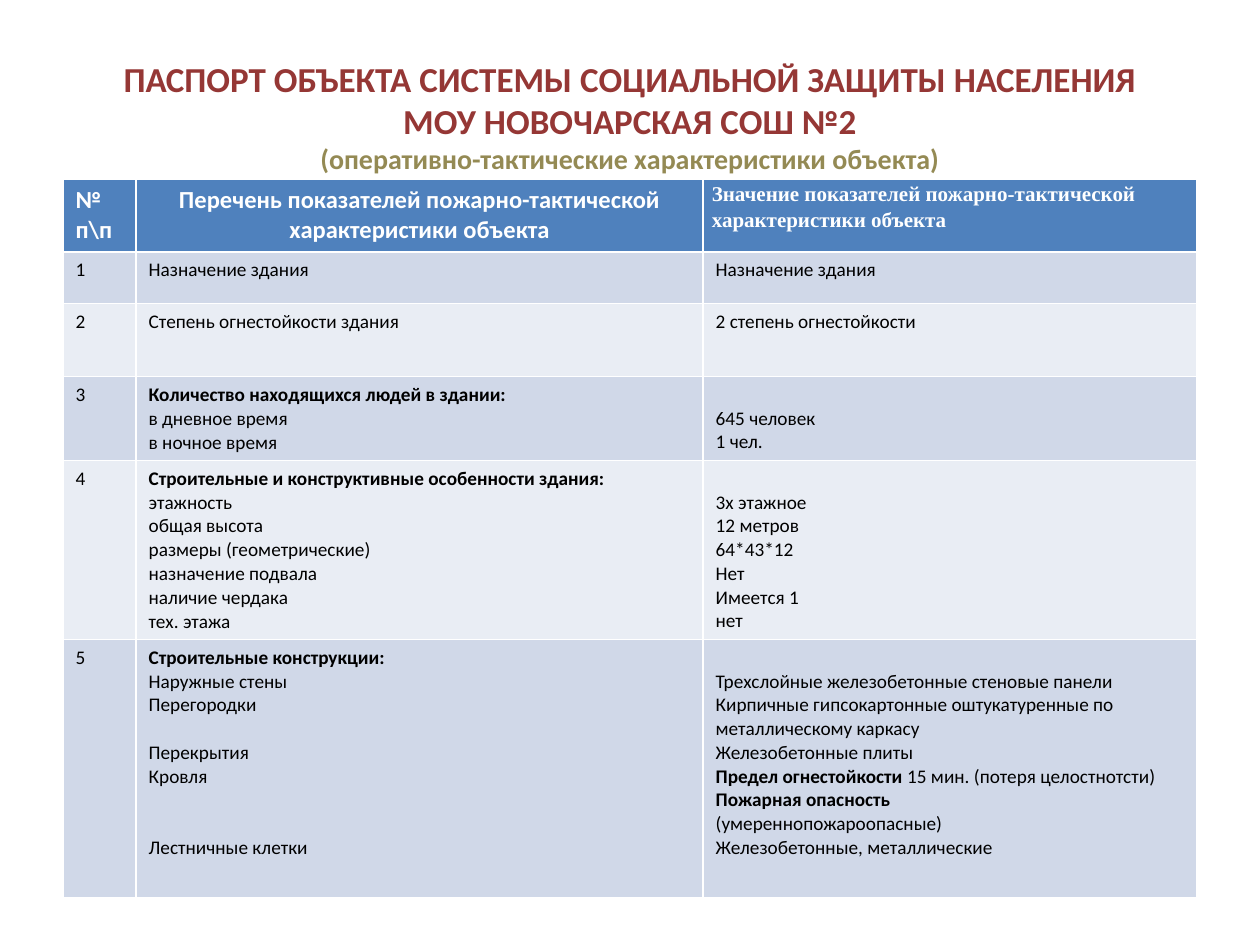
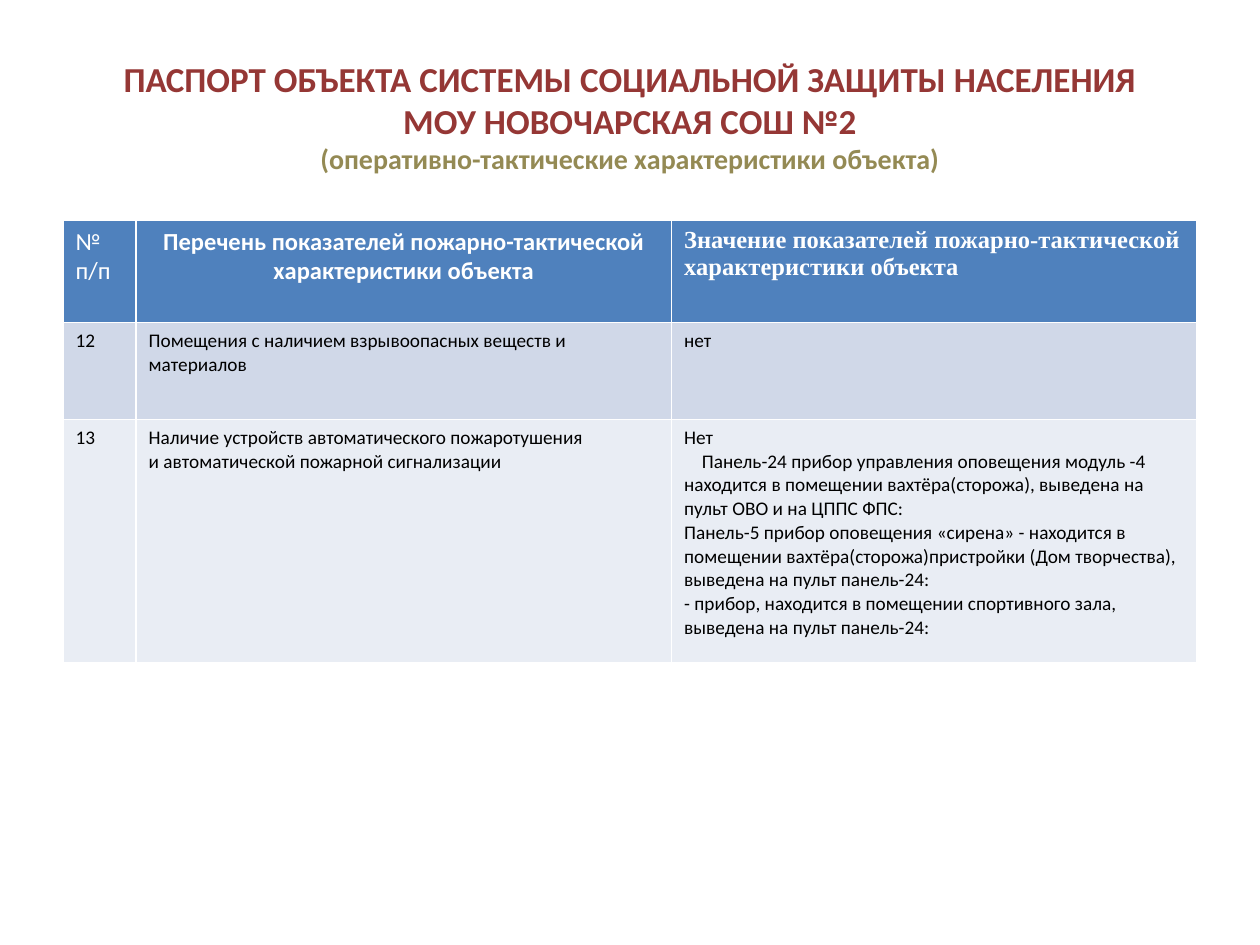
from dataclasses import dataclass

from pptx import Presentation
from pptx.dml.color import RGBColor
from pptx.enum.text import MSO_ANCHOR, MSO_AUTO_SIZE, PP_ALIGN
from pptx.util import Inches, Pt

SLIDE_WIDTH, SLIDE_HEIGHT = Inches(10), Inches(7.5)
COLUMN, ROW = SLIDE_WIDTH / 100, SLIDE_HEIGHT / 75
MARGIN, CONTENT = 5, 90
SANS, SERIF = "Calibri", "Times New Roman"
RED, OLIVE, BLUE = "953735", "948A54", "4F81BD"
BANDS = ("D0D8E8", "E9EDF4")
WHITE, BLACK = "FFFFFF", "000000"
BODY_SIZE, LINE_PITCH = 11, 13.5
TITLE_LINES = (
    ("ПАСПОРТ ОБЪЕКТА СИСТЕМЫ СОЦИАЛЬНОЙ ЗАЩИТЫ НАСЕЛЕНИЯ", 20, RED),
    ("МОУ НОВОЧАРСКАЯ СОШ №2", 20, RED),
    ("(оперативно-тактические характеристики объекта)", 16, OLIVE),
)
INDICATORS = "Перечень показателей пожарно-тактической характеристики объекта"
VALUES = "Значение показателей пожарно-тактической характеристики объекта"


@dataclass(frozen=True)
class Line:
    text: str
    bold: bool = False
    tail: str = ""
    skipped: int = 0
    indent: float = 0


@dataclass(frozen=True)
class Heading:
    lines: tuple[str, ...]
    font: str = SANS
    size: int = 14
    bold: bool = True
    centred: bool = False
    spacing: float = 1.0
    inset: tuple[float, float] | None = None


@dataclass(frozen=True)
class Entry:
    number: str
    indicators: list
    values: list
    height: float
    values_skip: int = 0


@dataclass(frozen=True)
class Passport:
    top: float
    widths: tuple[float, ...]
    heading_height: float
    headings: tuple[Heading, ...]
    entries: tuple[Entry, ...]


INDICATOR_HEADING = Heading((INDICATORS,), centred=True)

PASSPORTS = (
    Passport(
        14.2, (5.8, 45, 39.2), 5.8,
        (
            Heading(("№", "п\\п")),
            INDICATOR_HEADING,
            Heading((VALUES,), SERIF, 12, spacing=1.15, inset=(0.7, 0)),
        ),
        (
            Entry("1", ["Назначение здания"], ["Назначение здания"], 4.1),
            Entry("2", ["Степень огнестойкости здания"], ["2 степень огнестойкости"], 5.8),
            Entry(
                "3",
                [Line("Количество находящихся людей в здании:", bold=True),
                 "в дневное время", "в ночное время"],
                ["645 человек", "1 чел."],
                6.5, values_skip=1,
            ),
            Entry(
                "4",
                [Line("Строительные и конструктивные особенности здания:", bold=True),
                 "этажность", "общая высота", "размеры (геометрические)",
                 "назначение подвала", "наличие чердака", "тех. этажа"],
                ["3х этажное", "12 метров", "64*43*12", "Нет", "Имеется 1", "нет"],
                13.8, values_skip=1,
            ),
            Entry(
                "5",
                [Line("Строительные конструкции:", bold=True),
                 "Наружные стены", "Перегородки",
                 Line("Перекрытия", skipped=1), "Кровля",
                 Line("Лестничные клетки", skipped=2)],
                ["Трехслойные железобетонные стеновые панели",
                 "Кирпичные гипсокартонные оштукатуренные по металлическому каркасу",
                 "Железобетонные плиты",
                 Line("Предел огнестойкости ", bold=True, tail="15 мин. (потеря целостнотсти)"),
                 Line("Пожарная опасность", bold=True),
                 "(умереннопожароопасные)", "Железобетонные, металлические"],
                20.5, values_skip=1,
            ),
        ),
    ),
    Passport(
        17.5, (5.8, 42.5, 41.7), 8.1,
        (
            Heading(("№ п/п",), bold=False),
            INDICATOR_HEADING,
            Heading((VALUES,), SERIF),
        ),
        (
            Entry("12", ["Помещения с наличием взрывоопасных веществ и материалов"], ["нет"], 7.7),
            Entry(
                "13",
                ["Наличие устройств автоматического пожаротушения",
                 "и автоматической пожарной сигнализации"],
                ["Нет",
                 Line("Панель-24 прибор управления оповещения модуль -4 находится в помещении "
                      "вахтёра(сторожа), выведена на пульт ОВО и на ЦППС ФПС:", indent=1.4),
                 "Панель-5 прибор оповещения «сирена» - находится в помещении "
                 "вахтёра(сторожа)пристройки (Дом творчества), выведена на пульт панель-24:",
                 "- прибор, находится в помещении спортивного зала, выведена на пульт панель-24:"],
                19.3,
            ),
        ),
    ),
)


def across(columns: float) -> int:
    return round(columns * COLUMN)


def down(rows: float) -> int:
    return round(rows * ROW)


def colour(target, value: str) -> None:
    target.rgb = RGBColor.from_string(value)


def paint(cell, value: str) -> None:
    cell.fill.solid()
    colour(cell.fill.fore_color, value)


def style(para, name: str, size: int, value: str, bold: bool | None) -> None:
    para.font.name = name
    para.font.size = Pt(size)
    para.font.bold = bold
    colour(para.font.color, value)


def paragraphs(frame, count: int) -> list:
    return [frame.paragraphs[0]] + [frame.add_paragraph() for _ in range(count - 1)]


def draw_title(page) -> None:
    title = page.shapes.title
    title.left, title.top = across(MARGIN), down(3)
    title.width, title.height = across(CONTENT), down(12.5)
    frame = title.text_frame
    frame.auto_size = MSO_AUTO_SIZE.NONE
    frame.vertical_anchor = MSO_ANCHOR.MIDDLE
    para = frame.paragraphs[0]
    para.alignment = PP_ALIGN.CENTER
    para.font.name, para.font.bold = SANS, True
    for index, (text, size, value) in enumerate(TITLE_LINES):
        if index:
            para.add_line_break()
        span = para.add_run()
        span.text = text
        span.font.size = Pt(size)
        colour(span.font.color, value)


def write_heading(cell, heading: Heading) -> None:
    paint(cell, BLUE)
    if heading.inset:
        side, edge = heading.inset
        cell.margin_left = cell.margin_right = across(side)
        cell.margin_top = cell.margin_bottom = down(edge)
    for para, text in zip(paragraphs(cell.text_frame, len(heading.lines)), heading.lines):
        para.text = text
        para.alignment = PP_ALIGN.CENTER if heading.centred else PP_ALIGN.LEFT
        para.line_spacing = heading.spacing
        style(para, heading.font, heading.size, WHITE, heading.bold)


def write_lines(cell, items: list, band: str, skipped: int = 0) -> None:
    paint(cell, band)
    cell.margin_top = down(0.5) + Pt(LINE_PITCH * skipped)
    for para, item in zip(paragraphs(cell.text_frame, len(items)), items):
        line = item if isinstance(item, Line) else Line(item)
        para.text = line.text
        if line.skipped:
            para.space_before = Pt(LINE_PITCH * line.skipped)
        if line.indent:
            para._p.get_or_add_pPr().set("indent", str(across(line.indent)))
        style(para, SANS, BODY_SIZE, BLACK, None if line.tail else line.bold)
        if line.tail:
            para.runs[0].font.bold = line.bold
            tail = para.add_run()
            tail.text = line.tail
            tail.font.bold = False


def draw_passport(page, passport: Passport) -> None:
    heights = [passport.heading_height] + [entry.height for entry in passport.entries]
    table = page.shapes.add_table(
        len(heights), len(passport.widths),
        across(MARGIN), down(passport.top), across(CONTENT), down(sum(heights)),
    ).table
    for column, width in zip(table.columns, passport.widths):
        column.width = across(width)
    for row, height in zip(table.rows, heights):
        row.height = down(height)
    for index, heading in enumerate(passport.headings):
        write_heading(table.cell(0, index), heading)
    for index, entry in enumerate(passport.entries):
        band = BANDS[index % 2]
        number, indicators, values = table.rows[index + 1].cells
        write_lines(number, [entry.number], band)
        write_lines(indicators, entry.indicators, band)
        write_lines(values, entry.values, band, entry.values_skip)


def main() -> None:
    deck = Presentation()
    deck.slide_width, deck.slide_height = SLIDE_WIDTH, SLIDE_HEIGHT
    for passport in PASSPORTS:
        page = deck.slides.add_slide(deck.slide_layouts[5])
        draw_title(page)
        draw_passport(page, passport)
    deck.save("out.pptx")


if __name__ == "__main__":
    main()
